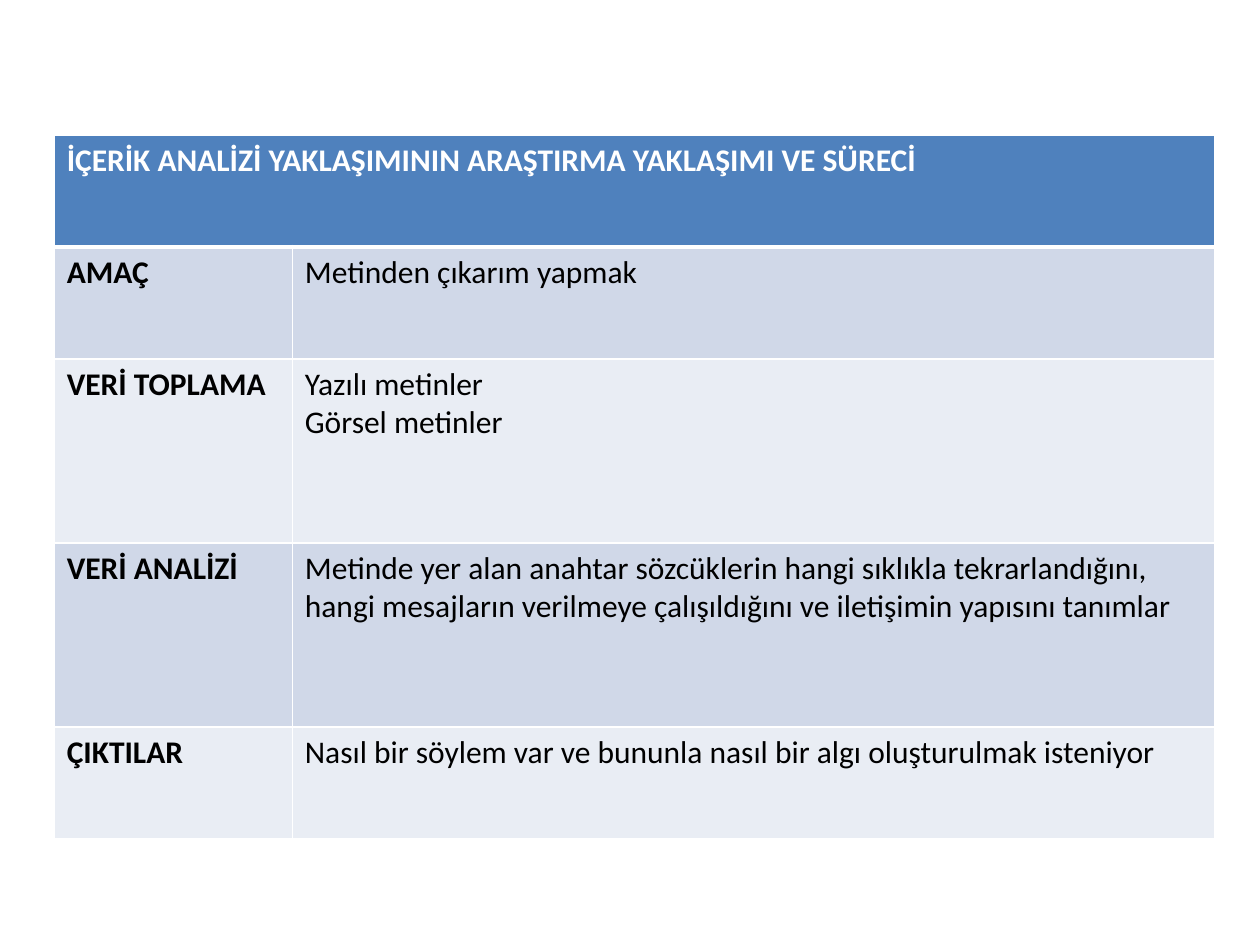
import pptx
import pptx.dml.color
import pptx.oxml
import pptx.oxml.ns
import pptx.util
from pptx.util import Inches

RGBColor = pptx.dml.color.RGBColor
WHITE = RGBColor(0xFF, 0xFF, 0xFF)
BLACK = RGBColor(0x00, 0x00, 0x00)
HEADER_BLUE = RGBColor(0x4F, 0x81, 0xBD)
BANDS = [RGBColor(0xD0, 0xD8, 0xE8), RGBColor(0xE9, 0xED, 0xF4)]

# Content
TITLE = "İÇERİK ANALİZİ YAKLAŞIMININ ARAŞTIRMA YAKLAŞIMI VE SÜRECİ"
STAGES = [
    ("AMAÇ", ["Metinden çıkarım yapmak"]),
    ("VERİ TOPLAMA", ["Yazılı metinler", "Görsel metinler"]),
    ("VERİ ANALİZİ", ["Metinde yer alan anahtar sözcüklerin hangi sıklıkla tekrarlandığını, "
                      "hangi mesajların verilmeye çalışıldığını ve iletişimin yapısını tanımlar"]),
    ("ÇIKTILAR", ["Nasıl bir söylem var ve bununla nasıl bir algı oluşturulmak isteniyor"]),
]
LEFT, TOP = 0.43, 1.07
COL_WIDTHS = [1.89, 7.32]
ROW_HEIGHTS = [0.89, 0.89, 1.46, 1.46, 0.89]


def set_borders(cell, top=1, bottom=1):
    tcPr = cell._tc.get_or_add_tcPr()
    for side, width in (("L", 1), ("R", 1), ("T", top), ("B", bottom)):
        tcPr.append(pptx.oxml.parse_xml(
            f'<a:ln{side} {pptx.oxml.ns.nsdecls("a")} w="{pptx.util.Pt(width)}">'
            f'<a:solidFill><a:srgbClr val="{WHITE}"/></a:solidFill></a:ln{side}>'))


def fill_cell(cell, lines, fill, color, bold):
    cell.fill.solid()
    cell.fill.fore_color.rgb = fill
    tf = cell.text_frame
    for i, line in enumerate(lines):
        p = tf.add_paragraph() if i else tf.paragraphs[0]
        r = p.add_run()
        r.text = line
        r.font.name = "Calibri"
        r.font.size = pptx.util.Pt(18)
        r.font.bold = bold
        r.font.color.rgb = color


prs = pptx.Presentation()
prs.slide_width, prs.slide_height = Inches(10), Inches(7.5)
s = prs.slides.add_slide(prs.slide_layouts[6])

# Table grid
table = s.shapes.add_table(
    len(ROW_HEIGHTS), len(COL_WIDTHS), Inches(LEFT), Inches(TOP),
    Inches(sum(COL_WIDTHS)), Inches(sum(ROW_HEIGHTS))).table
for column, width in zip(table.columns, COL_WIDTHS):
    column.width = Inches(width)
for i, height in enumerate(ROW_HEIGHTS):
    table.rows[i].height = Inches(height)
    for cell in table.rows[i].cells:
        set_borders(cell, top=3 if i == 1 else 1, bottom=3 if i == 0 else 1)

# Header across both columns
header = table.cell(0, 0)
header.merge(table.cell(0, 1))
fill_cell(header, [TITLE], HEADER_BLUE, WHITE, True)

# Stage rows in alternating bands
for i, (stage, lines) in enumerate(STAGES):
    band = BANDS[i % 2]
    fill_cell(table.cell(i + 1, 0), [stage], band, BLACK, True)
    fill_cell(table.cell(i + 1, 1), lines, band, BLACK, False)

prs.save("out.pptx")
